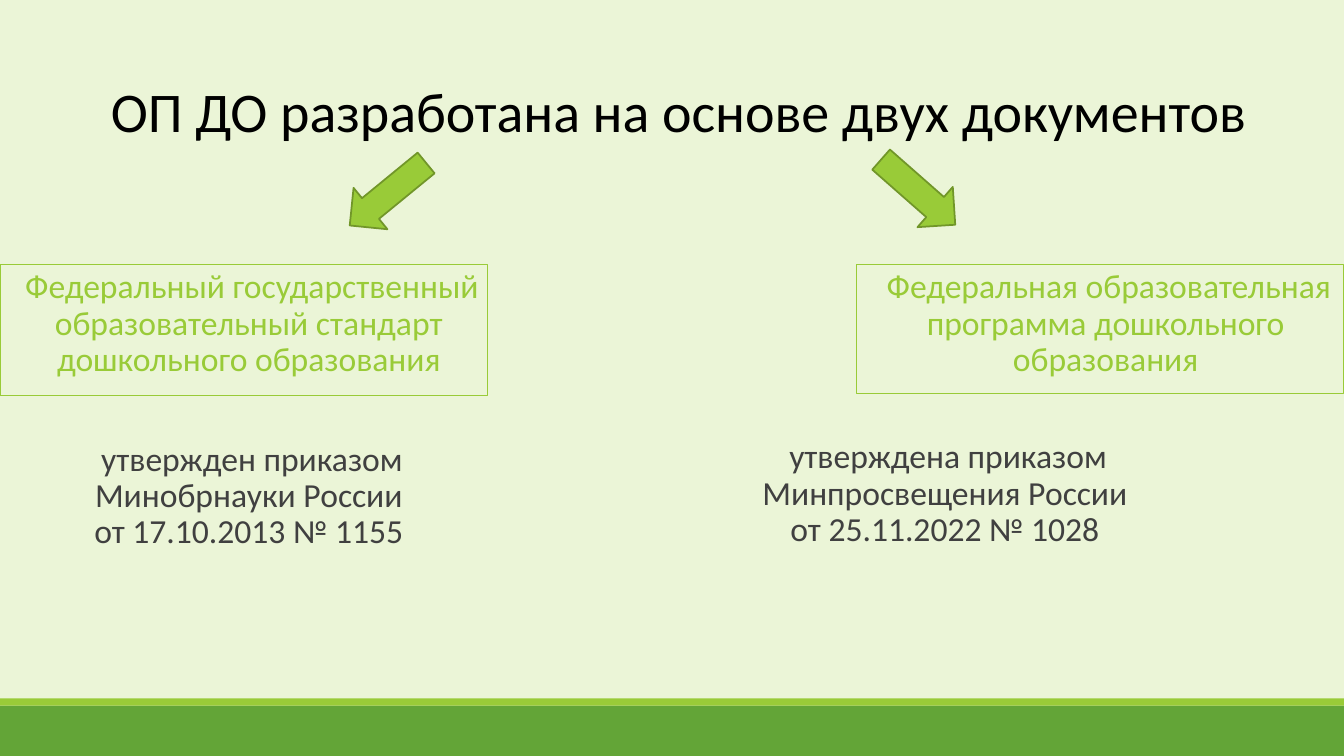
import pptx
import pptx.util
import pptx.dml.color
import pptx.enum.shapes
import pptx.enum.text
import pptx.oxml.ns
import lxml.etree

Shape = pptx.enum.shapes.MSO_SHAPE
Align = pptx.enum.text.PP_ALIGN
Anchor = pptx.enum.text.MSO_ANCHOR
Fit = pptx.enum.text.MSO_AUTO_SIZE

WIDE, HIGH = 1280, 720
INKS = {
    "back": "EBF5D7",
    "lime": "99CB38",
    "edge": "719629",
    "green": "63A537",
    "grey": "404040",
    "black": "000000",
}


def px(n):
    return pptx.util.Emu(n * 9525)


def ink(name):
    return pptx.dml.color.RGBColor.from_string(INKS[name])


def write(frame, text, size=24, color="grey", align=Align.CENTER):
    para = frame.paragraphs[0]
    para.text = text
    para.alignment = align
    for run in para.runs:
        run.font.name = "Calibri"
        run.font.size = pptx.util.Pt(size)
        run.font.color.rgb = ink(color)
    return para


def indent(para, left):
    """Hanging indent with a blank bullet."""
    props = para._p.get_or_add_pPr()
    props.set("marL", str(px(left)))
    props.set("indent", str(-px(left)))
    bullet = lxml.etree.SubElement(props, pptx.oxml.ns.qn("a:buChar"))
    bullet.set("char", " ")


class Deck:
    def __init__(self):
        self.show = pptx.Presentation()
        self.show.slide_width, self.show.slide_height = px(WIDE), px(HIGH)
        self.page = self.show.slides.add_slide(self.show.slide_layouts[5])
        fill = self.page.background.fill
        fill.solid()
        fill.fore_color.rgb = ink("back")

    def title(self, text, x, y, w, h):
        head = self.page.shapes.title
        head.left, head.top, head.width, head.height = map(px, (x, y, w, h))
        frame = head.text_frame
        frame.word_wrap = True
        frame.auto_size = Fit.SHAPE_TO_FIT_TEXT
        frame.vertical_anchor = Anchor.TOP
        write(frame, text, size=40, color="black", align=Align.LEFT)

    def shape(self, kind, x, y, w, h, fill=None, line=None, width=0.75, turn=0):
        item = self.page.shapes.add_shape(kind, *map(px, (x, y, w, h)))
        item.shadow.inherit = False
        item.rotation = turn
        if fill:
            item.fill.solid()
            item.fill.fore_color.rgb = ink(fill)
        else:
            item.fill.background()
        if line:
            item.line.color.rgb = ink(line)
            item.line.width = pptx.util.Pt(width)
        else:
            item.line.fill.background()
        return item

    def body(self, item, text, color):
        frame = item.text_frame
        frame.word_wrap = True
        frame.vertical_anchor = Anchor.TOP
        frame.margin_left = frame.margin_right = 0
        frame.margin_top = frame.margin_bottom = px(5)
        para = write(frame, text, color=color)
        para.line_spacing = 0.9
        para.space_before = pptx.util.Pt(12)
        para.space_after = pptx.util.Pt(2)
        indent(para, 10)

    def box(self, text, x, y, w, h):
        item = self.shape(Shape.RECTANGLE, x, y, w, h, line="lime")
        self.body(item, text, "lime")

    def note(self, text, x, y, w, h):
        item = self.page.shapes.add_textbox(*map(px, (x, y, w, h)))
        self.body(item, text, "grey")

    def arrow(self, x, y, turn):
        self.shape(Shape.DOWN_ARROW, x, y, 51, 94, fill="lime",
                   line="edge", width=1.25, turn=turn)


def main():
    deck = Deck()

    # Bottom bands
    deck.shape(Shape.RECTANGLE, 0, 672, WIDE, 48, fill="green")
    deck.shape(Shape.RECTANGLE, 0, 665, WIDE, 7, fill="lime")

    # Title
    deck.title("ОП ДО разработана на основе двух документов", 96, 68, 1116, 74)

    # Left document
    deck.arrow(344, 138, 50.7)
    deck.box("Федеральный государственный образовательный стандарт "
             "дошкольного образования", 0, 252, 464, 125)
    deck.note("утвержден приказом Минобрнауки России\n"
              "от 17.10.2013 № 1155", 0, 416, 464, 138)

    # Right document
    deck.arrow(849, 136, 311.3)
    deck.box("Федеральная образовательная программа дошкольного образования",
             816, 252, 464, 123)
    deck.note("утверждена приказом Минпросвещения России\n"
              "от 25.11.2022 № 1028", 668, 414, 454, 138)

    deck.show.save("out.pptx")


if __name__ == "__main__":
    main()
